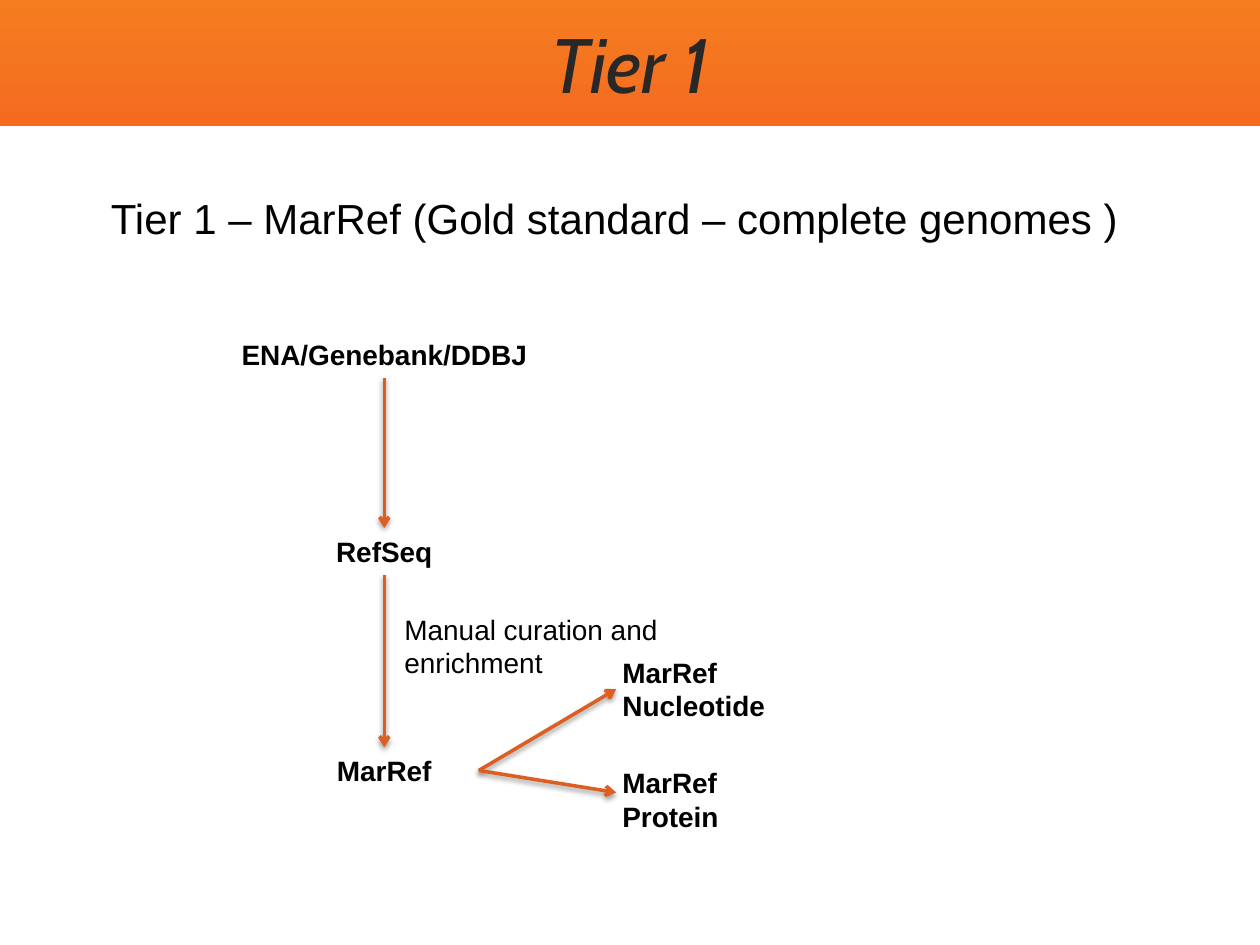
from dataclasses import dataclass

from lxml.etree import SubElement
from pptx import Presentation
from pptx.dml.color import RGBColor
from pptx.enum.shapes import MSO_CONNECTOR, MSO_SHAPE
from pptx.enum.text import MSO_ANCHOR, MSO_AUTO_SIZE, PP_ALIGN
from pptx.oxml.ns import qn
from pptx.util import Inches, Pt


@dataclass(frozen=True)
class Theme:
    band_bottom: RGBColor = RGBColor(0xF4, 0x6B, 0x20)
    band_top: RGBColor = RGBColor(0xF4, 0x7D, 0x20)
    title: RGBColor = RGBColor(0x28, 0x28, 0x28)
    text: RGBColor = RGBColor(0, 0, 0)
    arrow: RGBColor = RGBColor(0xDD, 0x5E, 0x21)
    title_font: str = "Cabin"
    body_font: str = "Arial"
    title_size: Pt = Pt(44)
    heading_size: Pt = Pt(24)
    label_size: Pt = Pt(16)
    arrow_width: Pt = Pt(2)


THEME = Theme()
TOP, RIGHT, BOTTOM, LEFT = 0, 3, 2, 1
INSET = Inches(0.05)


def set_font(p, name, size, color, bold=False, italic=False):
    p.font.name, p.font.size = name, size
    p.font.bold, p.font.italic = bold, italic
    p.font.color.rgb = color


def add_title(slide, text):
    title = slide.shapes.title
    title.left, title.top = Inches(0.5), Inches(0.15)
    title.width, title.height = Inches(9), Inches(0.7)
    tf = title.text_frame
    tf.text = text
    tf.vertical_anchor = MSO_ANCHOR.MIDDLE
    p = tf.paragraphs[0]
    p.alignment = PP_ALIGN.CENTER
    set_font(p, THEME.title_font, THEME.title_size, THEME.title, italic=True)
    return title


def add_band(slide, title):
    """Add the gradient band across the top, behind the title."""
    band = slide.shapes.add_shape(MSO_SHAPE.RECTANGLE, 0, 0, Inches(10), Inches(1))
    band.shadow.inherit = False
    band.line.fill.background()
    band.fill.gradient()
    band.fill.gradient_angle = 90
    for stop, color in zip(band.fill.gradient_stops, (THEME.band_bottom, THEME.band_top)):
        stop.color.rgb = color
    title._element.addprevious(band._element)


def add_label(slide, text, left, top, width, height, size=THEME.label_size,
              bold=True, align=PP_ALIGN.LEFT, wrap=True):
    sp = slide.shapes.add_textbox(Inches(left), Inches(top), Inches(width), Inches(height))
    tf = sp.text_frame
    tf.word_wrap = wrap
    tf.auto_size = MSO_AUTO_SIZE.SHAPE_TO_FIT_TEXT
    tf.margin_left = tf.margin_right = tf.margin_top = tf.margin_bottom = INSET
    tf.text = text
    for p in tf.paragraphs:
        p.alignment = align
        set_font(p, THEME.body_font, size, THEME.text, bold)
    return sp


def add_step(slide, text, top, width):
    """Add a one-line label centred on the axis of the vertical flow."""
    axis = 3.05
    return add_label(slide, text, axis - width / 2, top, width, 0.37, align=PP_ALIGN.CENTER)


def add_arrow(slide, start, start_side, end=None, end_side=None, point=(0, 0)):
    """Join two labels, or run from a label to a free point."""
    x, y = point
    line = slide.shapes.add_connector(MSO_CONNECTOR.STRAIGHT, 0, 0, Inches(x), Inches(y))
    line.begin_connect(start, start_side)
    if end is not None:
        line.end_connect(end, end_side)
    line.line.color.rgb = THEME.arrow
    line.line.width = THEME.arrow_width
    SubElement(line.line._get_or_add_ln(), qn("a:tailEnd"), type="arrow")
    effects = SubElement(line._element.spPr, qn("a:effectLst"))
    shadow = SubElement(effects, qn("a:outerShdw"), blurRad=str(Pt(3)), dist=str(Pt(1.6)),
                        dir="5400000", rotWithShape="0")
    color = SubElement(shadow, qn("a:srgbClr"), val="000000")
    SubElement(color, qn("a:alpha"), val="38000")


def main():
    prs = Presentation()
    prs.slide_width, prs.slide_height = Inches(10), Inches(7.5)
    slide = prs.slides.add_slide(prs.slide_layouts[5])

    add_band(slide, add_title(slide, "Tier 1"))
    add_label(slide, "Tier 1 – MarRef (Gold standard – complete genomes )",
              0.83, 1.48, 8.18, 0.5, size=THEME.heading_size, bold=False, wrap=False)

    archives = add_step(slide, "ENA/Genebank/DDBJ", 2.63, 2.55)
    refseq = add_step(slide, "RefSeq", 4.19, 1.37)
    marref = add_step(slide, "MarRef", 5.93, 1.5)
    add_label(slide, "Manual curation and enrichment", 3.16, 4.81, 2.55, 0.64, bold=False)
    nucleotide = add_label(slide, "MarRef\nNucleotide", 4.89, 5.15, 1.3, 0.64)
    add_label(slide, "MarRef\nProtein", 4.89, 6.03, 1.3, 0.64)

    add_arrow(slide, archives, BOTTOM, refseq, TOP)
    add_arrow(slide, refseq, BOTTOM, marref, TOP)
    add_arrow(slide, marref, RIGHT, nucleotide, LEFT)
    add_arrow(slide, marref, RIGHT, point=(4.89, 6.29))

    prs.save("out.pptx")


if __name__ == "__main__":
    main()
